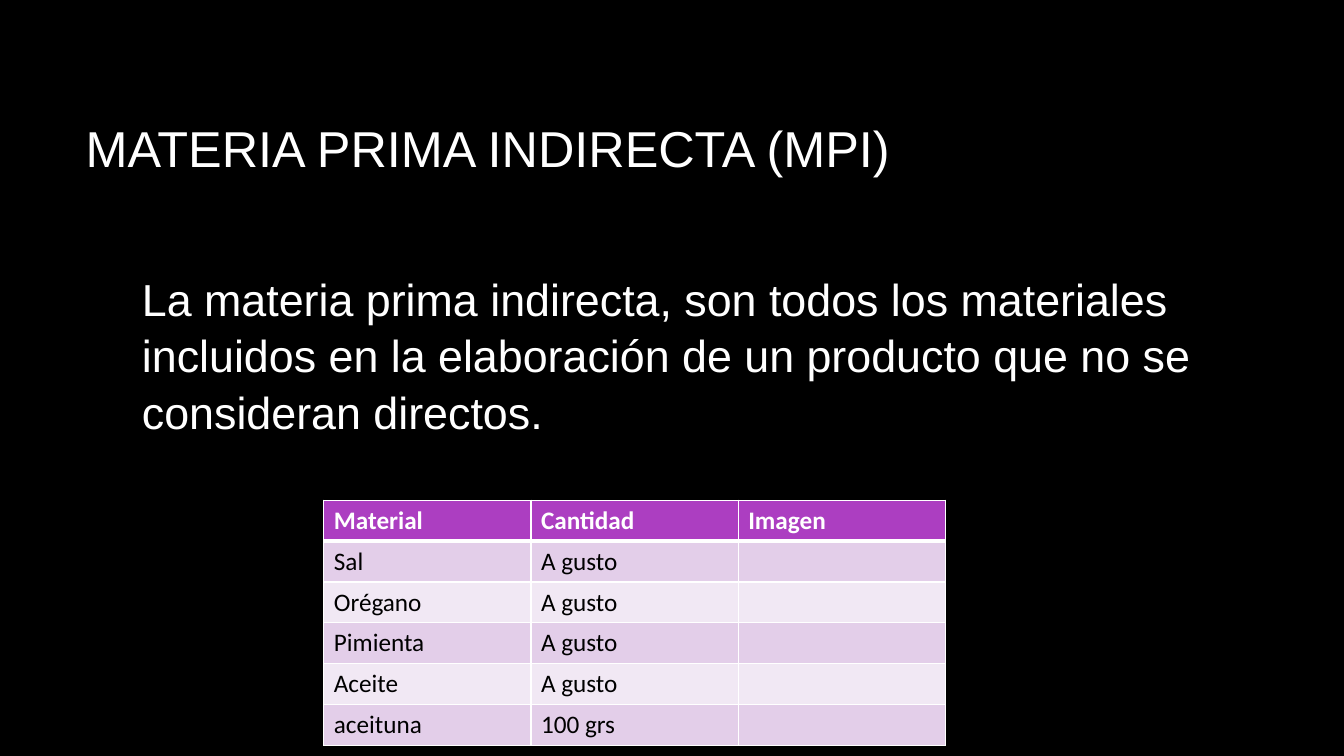
"""Build the slide on indirect raw materials."""
from lxml.etree import SubElement
from pptx import Presentation
from pptx.dml.color import RGBColor
from pptx.enum.text import MSO_ANCHOR as ANCHOR, PP_ALIGN as ALIGN
from pptx.oxml.ns import qn
from pptx.util import Pt

BLACK = RGBColor(0x00, 0x00, 0x00)
WHITE = RGBColor(0xFF, 0xFF, 0xFF)
PURPLE = RGBColor(0xAC, 0x3E, 0xC1)
LILAC = RGBColor(0xE3, 0xCE, 0xE9)
PALE_LILAC = RGBColor(0xF1, 0xE8, 0xF4)

TITLE = "MATERIA PRIMA INDIRECTA (MPI)"
DEFINITION = (
    "La materia prima indirecta, son todos los materiales incluidos en la "
    "elaboración de un producto que no se consideran directos."
)
MATERIALS = [
    ("Material", "Cantidad", "Imagen"),
    ("Sal", "A gusto", ""),
    ("Orégano", "A gusto", ""),
    ("Pimienta", "A gusto", ""),
    ("Aceite", "A gusto", ""),
    ("aceituna", "100 grs", ""),
]


def write(tf, text, size=18, font="Arial", color=WHITE, bold=False, spacing=1.0):
    p = tf.paragraphs[0]
    p.alignment = ALIGN.LEFT
    p.line_spacing = spacing
    p.font.size = Pt(size)
    if text:
        r = p.add_run()
        r.text = text
        r.font.name = font
        r.font.size = Pt(size)
        r.font.bold = bold
        r.font.color.rgb = color


def add_title(s, text, left, top, width, height):
    sp = s.shapes.title
    sp.left, sp.top, sp.width, sp.height = Pt(left), Pt(top), Pt(width), Pt(height)
    sp.text_frame.vertical_anchor = ANCHOR.MIDDLE
    write(sp.text_frame, text, size=36)


def add_text(s, text, left, top, width, height, **fmt):
    sp = s.shapes.add_textbox(Pt(left), Pt(top), Pt(width), Pt(height))
    sp.text_frame.word_wrap = True
    write(sp.text_frame, text, **fmt)


def set_borders(cell, **widths):
    tc_pr = cell._tc.get_or_add_tcPr()
    for side in "LRTB":
        ln = SubElement(tc_pr, qn(f"a:ln{side}"), w=str(Pt(widths.get(side, 1))))
        fill = SubElement(ln, qn("a:solidFill"))
        SubElement(fill, qn("a:srgbClr"), val=str(WHITE))


def format_cell(cell, text, row):
    header = row == 0
    widths = {0: {"B": 3}, 1: {"T": 3}}.get(row, {})
    set_borders(cell, **widths)
    cell.fill.solid()
    band = LILAC if row % 2 else PALE_LILAC
    cell.fill.fore_color.rgb = PURPLE if header else band
    color = WHITE if header else BLACK
    write(cell.text_frame, text, font="Calibri", color=color, bold=header)


def add_materials(s, rows, left, top, col_width, row_height):
    n_rows, n_cols = len(rows), len(rows[0])
    table = s.shapes.add_table(
        n_rows, n_cols, Pt(left), Pt(top),
        Pt(col_width * n_cols), Pt(row_height * n_rows),
    ).table
    for i, row in enumerate(rows):
        for j, text in enumerate(row):
            format_cell(table.cell(i, j), text, i)


def main():
    prs = Presentation()
    prs.slide_width, prs.slide_height = Pt(960), Pt(540)
    s = prs.slides.add_slide(prs.slide_layouts.get_by_name("Title Only"))
    s.background.fill.solid()
    s.background.fill.fore_color.rgb = BLACK
    add_title(s, TITLE, 54, 48, 798, 114.5)
    add_materials(s, MATERIALS, 231.3, 357.3, 148, 29.2)
    add_text(s, DEFINITION, 94.3, 188.6, 782.6, 123.8, size=32, spacing=1.05)
    prs.save("out.pptx")


if __name__ == "__main__":
    main()
